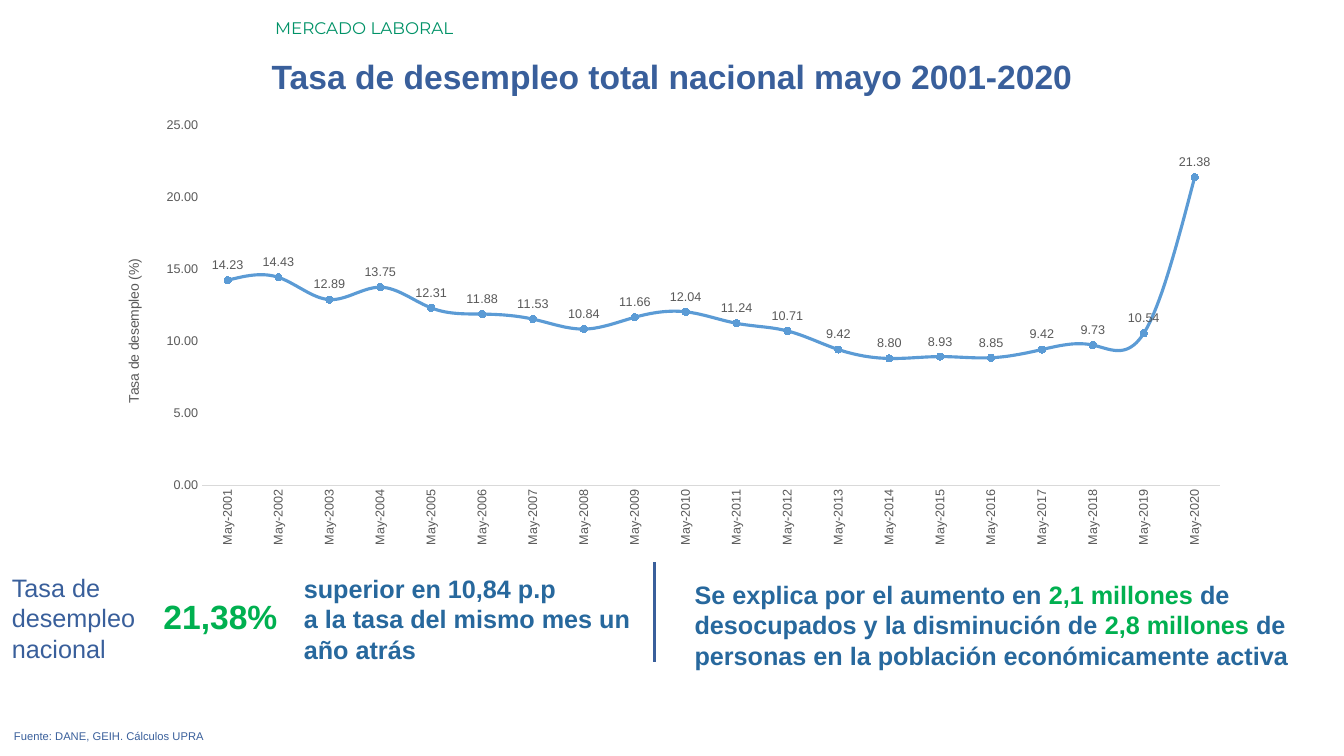
from lxml.etree import SubElement
from pptx import Presentation
from pptx.chart.data import CategoryChartData
from pptx.dml.color import RGBColor
from pptx.enum.chart import XL_CHART_TYPE, XL_LABEL_POSITION, XL_MARKER_STYLE, XL_TICK_MARK
from pptx.enum.shapes import MSO_CONNECTOR
from pptx.enum.text import MSO_ANCHOR, PP_ALIGN
from pptx.oxml.ns import qn
from pptx.util import Pt

NAVY, BLUE, GREEN = "395F9B", "27689D", "00B050"
GREY, LINE_BLUE = "595959", "5B9BD5"


def rgb(color):
    return RGBColor.from_string(color)


def write(sp, box, paragraphs, size, color, bold=False, align=PP_ALIGN.LEFT, font="Arial"):
    """Place a text shape; each paragraph is a list of (text, colour or None) runs."""
    sp.left, sp.top, sp.width, sp.height = map(Pt, box)
    tf = sp.text_frame
    tf.word_wrap = True
    tf.vertical_anchor = MSO_ANCHOR.TOP
    for i, runs in enumerate(paragraphs):
        p = tf.add_paragraph() if i else tf.paragraphs[0]
        p.alignment = align
        p.font.name, p.font.size, p.font.bold = font, Pt(size), bold
        p.font.color.rgb = rgb(color)
        for text, run_color in runs:
            r = p.add_run()
            r.text = text
            r.font.name, r.font.size, r.font.bold = font, Pt(size), bold
            r.font.color.rgb = rgb(run_color or color)


prs = Presentation()
prs.slide_width, prs.slide_height = Pt(960), Pt(540)
s = prs.slides.add_slide(prs.slide_layouts[5])

write(s.shapes.title, (0, 36, 960, 36),
      [[("Tasa de desempleo total nacional mayo 2001-2020", None)]],
      24, NAVY, True, PP_ALIGN.CENTER)

explanation = [
    ("Se explica por el aumento en ", None), ("2,1 millones ", GREEN),
    ("de desocupados y la disminución de ", None), ("2,8 millones ", GREEN),
    ("de personas en la población económicamente activa", None),
]
comparison = [[("superior en 10,84 p.p", None)],
              [("a la tasa del mismo mes un año atrás", None)]]
texts = [
    ((189.4, 9.4, 770, 21.6), [[("MERCADO LABORAL", None)]],
     12, "009267", False, PP_ALIGN.LEFT, "Montserrat"),
    ((1.4, 405.4, 160, 72.7), [[("Tasa de desempleo nacional", None)]], 18, NAVY),
    ((93.6, 422, 111.6, 36), [[("21,38%", None)]], 24, GREEN, True, PP_ALIGN.RIGHT),
    ((210, 406, 261.4, 72.7), comparison, 18, BLUE, True),
    ((489, 410.4, 459.4, 72.7), [explanation], 18, BLUE, True),
    ((2.9, 517.7, 929.5, 17.3), [[("Fuente: DANE, GEIH. Cálculos UPRA", None)]],
     8, NAVY, False, PP_ALIGN.JUSTIFY),
]
for box, *content in texts:
    write(s.shapes.add_textbox(0, 0, 0, 0), box, *content)

divider = s.shapes.add_connector(MSO_CONNECTOR.STRAIGHT, Pt(467.3), Pt(401.8), Pt(467.3), Pt(473))
divider.line.color.rgb = rgb(NAVY)
divider.line.width = Pt(2.25)
SubElement(divider._element.spPr, qn("a:effectLst"))

data = CategoryChartData(number_format="0.00")
data.categories = [f"May-{year}" for year in range(2001, 2021)]
data.add_series("Series 1", [
    14.23, 14.43, 12.89, 13.75, 12.31, 11.88, 11.53, 10.84, 11.66, 12.04,
    11.24, 10.71, 9.42, 8.8, 8.93, 8.85, 9.42, 9.73, 10.54, 21.38])
chart = s.shapes.add_chart(XL_CHART_TYPE.LINE_MARKERS, Pt(87.1), Pt(84.2),
                           Pt(795.6), Pt(320.4), data).chart
chart.has_legend = chart.has_title = False
chart.font.name, chart.font.size = "Arial", Pt(10)
chart.font.color.rgb = rgb(GREY)

months, rate = chart.category_axis, chart.value_axis
for axis in (months, rate):
    axis.major_tick_mark = axis.minor_tick_mark = XL_TICK_MARK.NONE
    axis.has_major_gridlines = False
    font = axis.tick_labels.font
    font.name, font.size = "Arial", Pt(9)
    font.color.rgb = rgb(GREY)
months.format.line.color.rgb = rgb("D9D9D9")
months.format.line.width = Pt(0.75)
months._element.find(qn("c:txPr")).find(qn("a:bodyPr")).set("rot", "-5400000")

rate.minimum_scale, rate.maximum_scale, rate.major_unit = 0, 25, 5
rate.format.line.fill.background()
rate.tick_labels.number_format = "0.00"
rate.tick_labels.number_format_is_linked = False
tf = rate.axis_title.text_frame
tf._txBody.bodyPr.set("rot", "-5400000")
p = tf.paragraphs[0]
p.text = "Tasa de desempleo (%)"
p.font.name, p.font.size, p.font.bold = "Arial", Pt(10), False
p.font.color.rgb = rgb(GREY)

plot = chart.plots[0]
plot.vary_by_categories = False
series = plot.series[0]
series.smooth = True
series.format.line.color.rgb = rgb(LINE_BLUE)
series.format.line.width = Pt(2.25)
marker = series.marker
marker.style, marker.size = XL_MARKER_STYLE.CIRCLE, 5
marker.format.fill.solid()
marker.format.fill.fore_color.rgb = rgb(LINE_BLUE)
marker.format.line.color.rgb = rgb(LINE_BLUE)
labels = series.data_labels
labels.show_value = True
labels.position = XL_LABEL_POSITION.ABOVE
labels.number_format, labels.number_format_is_linked = "#,##0.00", False
labels.font.name, labels.font.size = "Arial", Pt(9)
labels.font.color.rgb = rgb(GREY)

# Fixed inner plot area, as fractions of the chart
area = chart._chartSpace.chart.plotArea
for old in area.findall(qn("c:layout")):
    area.remove(old)
layout = SubElement(area, qn("c:layout"))
area.insert(0, layout)
manual = SubElement(layout, qn("c:manualLayout"))
for tag, value in [("layoutTarget", "inner"), ("xMode", "edge"), ("yMode", "edge"),
                   ("x", "0.072"), ("y", "0.016"), ("w", "0.914"), ("h", "0.803")]:
    SubElement(manual, qn(f"c:{tag}")).set("val", value)

prs.save("out.pptx")
